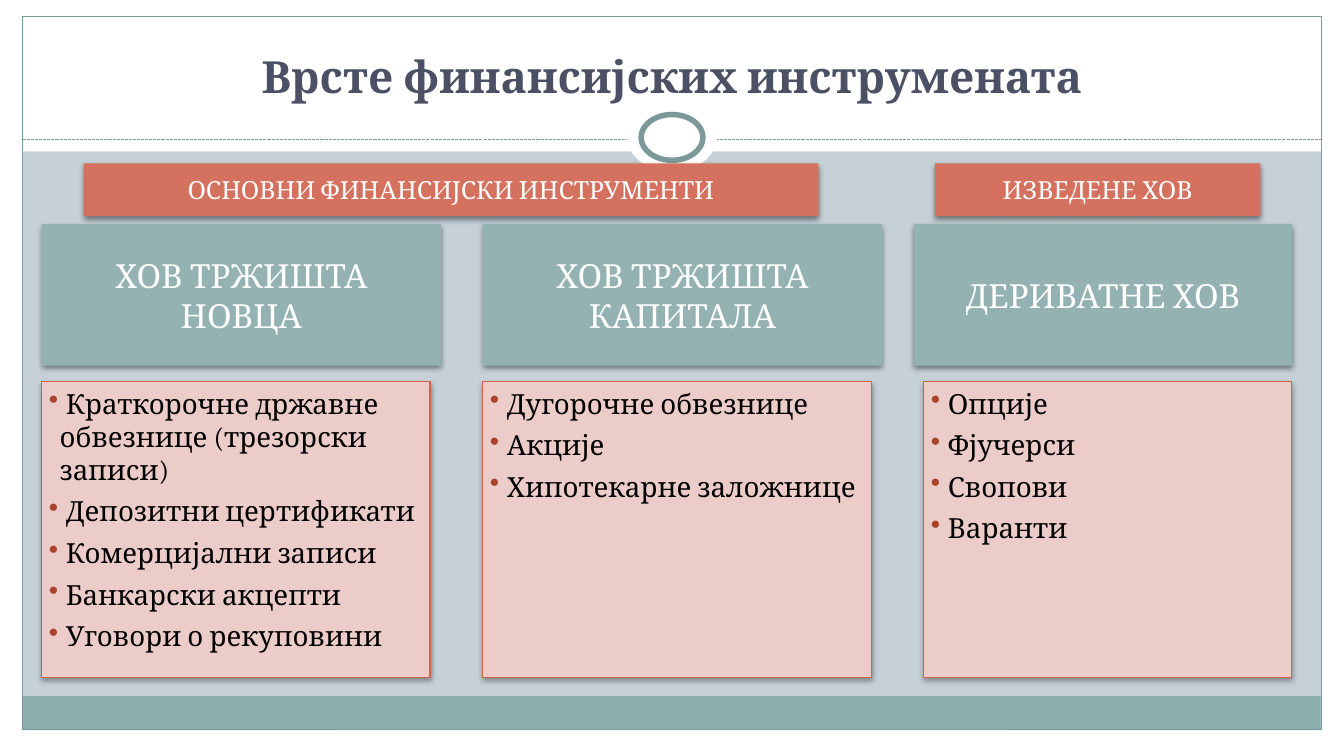
import dataclasses
import typing

import lxml.etree
import pptx
import pptx.dml.color
import pptx.enum.dml
import pptx.enum.shapes
import pptx.enum.text
import pptx.oxml
import pptx.oxml.ns
import pptx.presentation
import pptx.shapes.autoshape
import pptx.slide
import pptx.text.text
import pptx.util

RGBColor = pptx.dml.color.RGBColor
WHITE = RGBColor(0xFF, 0xFF, 0xFF)
BLACK = RGBColor(0x00, 0x00, 0x00)
BACKGROUND = RGBColor(0xC5, 0xD1, 0xD7)
FOOTER_TEAL = RGBColor(0x8C, 0xAD, 0xAE)
FRAME_TEAL = RGBColor(0x7C, 0x99, 0x9A)
HEADING_TEAL = RGBColor(0x95, 0xB2, 0xB3)
BANNER_RED = RGBColor(0xD4, 0x72, 0x5F)
LIST_PINK = RGBColor(0xEC, 0xCC, 0xC9)
LIST_BORDER = RGBColor(0xD1, 0x63, 0x49)
BULLET_RED = RGBColor(0xA9, 0x43, 0x2B)
TITLE_INDIGO = RGBColor(0x4B, 0x50, 0x64)

FONT = "Cambria"
COLUMNS, ROWS = 135, 75
WIDTH, HEIGHT = pptx.util.Inches(13.5), pptx.util.Inches(7.5)
RECTANGLE = pptx.enum.shapes.MSO_SHAPE.RECTANGLE
OVAL = pptx.enum.shapes.MSO_SHAPE.OVAL
CENTER = pptx.enum.text.PP_ALIGN.CENTER
LEFT = pptx.enum.text.PP_ALIGN.LEFT
ANCHOR = pptx.enum.text.MSO_ANCHOR


@dataclasses.dataclass(frozen=True)
class Area:
    """A place on the slide, in grid columns and rows."""
    column: float
    row: float
    columns: float
    rows: float

    def lengths(self) -> tuple[int, int, int, int]:
        return (across(self.column), down(self.row),
                across(self.columns), down(self.rows))


@dataclasses.dataclass(frozen=True)
class Decoration:
    area: Area
    fill: typing.Optional[RGBColor] = None
    line: typing.Optional[RGBColor] = None
    line_width: float = 0.75
    kind: pptx.enum.shapes.MSO_SHAPE = RECTANGLE


@dataclasses.dataclass(frozen=True)
class Banner:
    text: str
    column: float
    columns: float


@dataclasses.dataclass(frozen=True)
class Category:
    heading: str
    column: float
    columns: float
    list_column: float
    list_columns: float
    instruments: tuple[str, ...]


DECORATIONS = (
    Decoration(Area(0, 73.3, COLUMNS, 1.7), WHITE),
    Decoration(Area(0, 0, COLUMNS, 15.2), WHITE),
    Decoration(Area(0, 0, 2.3, ROWS), WHITE),
    Decoration(Area(132.75, 0, 2.25, ROWS), WHITE),
    Decoration(Area(2.25, 69.9, 130.4, 3.4), FOOTER_TEAL),
    Decoration(Area(2.3, 1.7, 130.4, 71.6), None, FRAME_TEAL),
)
RINGS = (
    Decoration(Area(63, 10.5, 9, 6.7), WHITE, kind=OVAL),
    Decoration(Area(64.4, 11.5, 6.2, 4.6), WHITE, FRAME_TEAL, 4, OVAL),
)
BANNERS = (
    Banner("ОСНОВНИ ФИНАНСИЈСКИ ИНСТРУМЕНТИ", 8.4, 73.8),
    Banner("ИЗВЕДЕНЕ ХОВ", 93.9, 32.7),
)
CATEGORIES = (
    Category("ХОВ ТРЖИШТА НОВЦА", 4.2, 40.1, 4.2, 39, (
        "Краткорочне државне обвезнице (трезорски записи)",
        "Депозитни цертификати", "Комерцијални записи",
        "Банкарски акцепти", "Уговори о рекуповини")),
    Category("ХОВ ТРЖИШТА КАПИТАЛА", 48.5, 40.1, 48.5, 39, (
        "Дугорочне обвезнице", "Акције", "Хипотекарне заложнице")),
    Category("ДЕРИВАТНЕ ХОВ", 91.8, 38, 92.8, 36.9, (
        "Опције", "Фјучерси", "Свопови", "Варанти")),
)


def across(columns: float) -> int:
    return round(WIDTH * columns / COLUMNS)


def down(rows: float) -> int:
    return round(HEIGHT * rows / ROWS)


def draw(slide: pptx.slide.Slide, item: Decoration) -> pptx.shapes.autoshape.Shape:
    shape = slide.shapes.add_shape(item.kind, *item.area.lengths())
    shape.shadow.inherit = False
    if item.fill is None:
        shape.fill.background()
    else:
        shape.fill.solid()
        shape.fill.fore_color.rgb = item.fill
    if item.line is None:
        shape.line.fill.background()
    else:
        shape.line.color.rgb = item.line
        shape.line.width = pptx.util.Pt(item.line_width)
    return shape


def cast_shadow(shape: pptx.shapes.autoshape.Shape, opacity: int) -> None:
    effects = shape._element.spPr.find(pptx.oxml.ns.qn("a:effectLst"))
    effects.append(pptx.oxml.parse_xml(
        f'<a:outerShdw {pptx.oxml.ns.nsdecls("a")} blurRad="{pptx.util.Pt(4)}" '
        f'dist="{pptx.util.Pt(2)}" dir="5400000" rotWithShape="0">'
        f'<a:srgbClr val="{BLACK}"><a:alpha val="{opacity * 1000}"/></a:srgbClr>'
        '</a:outerShdw>'))


def write(paragraph: pptx.text.text._Paragraph, text: str, size: float,
          color: RGBColor, alignment: pptx.enum.text.PP_ALIGN = CENTER) -> None:
    paragraph.text = text
    paragraph.alignment = alignment
    paragraph.font.name = FONT
    paragraph.font.size = pptx.util.Pt(size)
    paragraph.font.color.rgb = color


def add_bullet(paragraph: pptx.text.text._Paragraph) -> None:
    properties = paragraph._p.get_or_add_pPr()
    properties.set("marL", str(across(1.8)))
    properties.set("indent", str(-across(1.1)))
    color = lxml.etree.Element(pptx.oxml.ns.qn("a:buClr"))
    lxml.etree.SubElement(color, pptx.oxml.ns.qn("a:srgbClr"), val=str(BULLET_RED))
    mark = lxml.etree.Element(pptx.oxml.ns.qn("a:buChar"), char="•")
    position = len(properties.findall(pptx.oxml.ns.qn("a:spcAft")))
    properties.insert(position, color)
    properties.insert(position + 1, mark)


def add_label(slide: pptx.slide.Slide, area: Area, text: str,
              size: float, fill: RGBColor) -> None:
    shape = draw(slide, Decoration(area, fill))
    cast_shadow(shape, 45)
    shape.text_frame.vertical_anchor = ANCHOR.MIDDLE
    write(shape.text_frame.paragraphs[0], text, size, WHITE)


def add_list(slide: pptx.slide.Slide, area: Area, items: tuple[str, ...]) -> None:
    shape = draw(slide, Decoration(area, LIST_PINK, LIST_BORDER))
    cast_shadow(shape, 35)
    frame = shape.text_frame
    frame.vertical_anchor = ANCHOR.TOP
    frame.margin_left = frame.margin_right = 0
    for index, item in enumerate(items):
        paragraph = frame.add_paragraph() if index else frame.paragraphs[0]
        write(paragraph, f" {item}", 20, BLACK, LEFT)
        paragraph.space_after = pptx.util.Pt(6)
        add_bullet(paragraph)


def add_divider(slide: pptx.slide.Slide) -> None:
    divider = slide.shapes.add_connector(
        pptx.enum.shapes.MSO_CONNECTOR.STRAIGHT,
        across(2.3), down(14), across(132.7), down(14))
    divider.line.color.rgb = FRAME_TEAL
    divider.line.width = pptx.util.Pt(0.75)
    divider.line.dash_style = pptx.enum.dml.MSO_LINE.SQUARE_DOT
    lxml.etree.SubElement(divider._element.spPr, pptx.oxml.ns.qn("a:effectLst"))


def add_title(slide: pptx.slide.Slide) -> None:
    frame = slide.shapes.add_textbox(*Area(4.5, 2.5, 126, 8.3).lengths()).text_frame
    frame.word_wrap = True
    frame.vertical_anchor = ANCHOR.BOTTOM
    write(frame.paragraphs[0], "Врсте финансијских инструмената", 32, TITLE_INDIGO)
    frame.paragraphs[0].font.bold = True


def main() -> None:
    presentation = pptx.Presentation()
    presentation.slide_width, presentation.slide_height = WIDTH, HEIGHT
    slide = presentation.slides.add_slide(presentation.slide_layouts[6])
    slide.background.fill.solid()
    slide.background.fill.fore_color.rgb = BACKGROUND
    for decoration in DECORATIONS:
        draw(slide, decoration)
    add_divider(slide)
    for ring in RINGS:
        draw(slide, ring)
    add_title(slide)
    for category in CATEGORIES:
        add_label(slide, Area(category.column, 22.5, category.columns, 14.2),
                  category.heading, 24, HEADING_TEAL)
        add_list(slide, Area(category.list_column, 38.3, category.list_columns, 29.7),
                 category.instruments)
    for banner in BANNERS:
        add_label(slide, Area(banner.column, 16.4, banner.columns, 5.3),
                  banner.text, 18, BANNER_RED)
    presentation.save("out.pptx")


if __name__ == "__main__":
    main()
